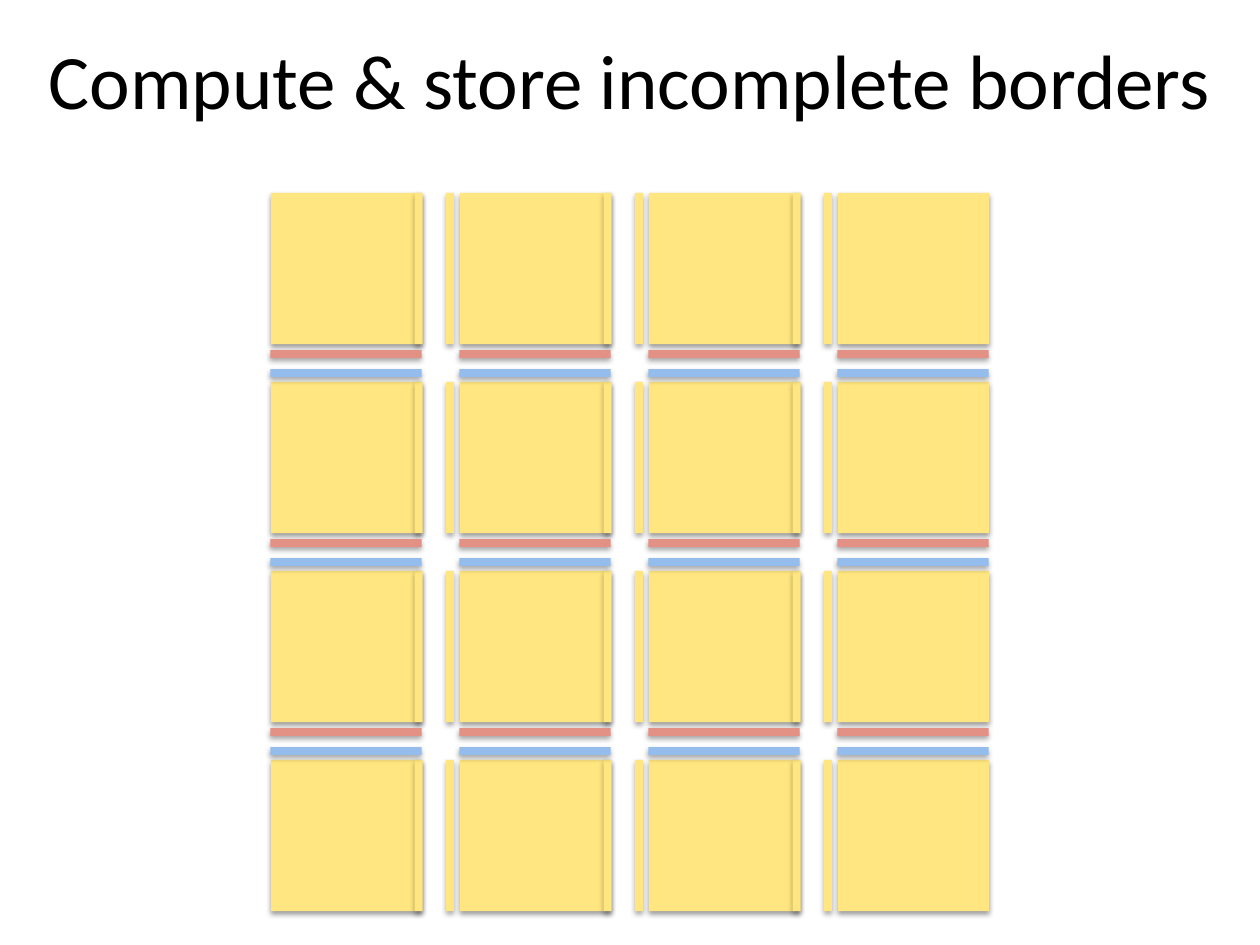
from lxml.etree import SubElement
from pptx import Presentation
from pptx.dml.color import RGBColor
from pptx.enum.shapes import MSO_SHAPE
from pptx.enum.text import MSO_ANCHOR, PP_ALIGN
from pptx.oxml.ns import qn
from pptx.util import Cm, Pt

BLACK = RGBColor(0x00, 0x00, 0x00)
YELLOW = RGBColor(0xFF, 0xE6, 0x80)
RED = RGBColor(0xE3, 0x90, 0x85)
BLUE = RGBColor(0x94, 0xBC, 0xEC)

# Grid measures in centimetres
N = 4
PITCH = 3.81
CELL = 3.05
BAR = 0.16
LEFT, TOP = 5.46, 3.89


def add_shadow(sp, distance, alpha):
    """Give the shape a soft black shadow straight below it."""
    sp.shadow.inherit = False
    effects = sp.element.spPr.find(qn("a:effectLst"))
    shadow = SubElement(effects, qn("a:outerShdw"), blurRad=str(Pt(3.1)),
                        dist=str(Pt(distance)), dir="5400000", rotWithShape="0")
    color = SubElement(shadow, qn("a:srgbClr"), val=str(BLACK))
    SubElement(color, qn("a:alpha"), val=str(alpha * 1000))


def add_text(tf, text, size=44, font="Calibri", color=BLACK, align=PP_ALIGN.CENTER):
    p = tf.paragraphs[0]
    p.alignment = align
    r = p.add_run()
    r.text = text
    r.font.size = Pt(size)
    r.font.name = font
    r.font.color.rgb = color


class Deck:
    def __init__(self, width, height):
        self.prs = Presentation()
        self.prs.slide_width, self.prs.slide_height = Cm(width), Cm(height)
        self.s = self.prs.slides.add_slide(self.prs.slide_layouts[6])

    def title(self, text, x, y, w, h):
        tf = self.s.shapes.add_textbox(Cm(x), Cm(y), Cm(w), Cm(h)).text_frame
        tf.word_wrap = True
        tf.vertical_anchor = MSO_ANCHOR.MIDDLE
        add_text(tf, text)

    def grid(self, x, y, w, h, color, cols=N, rows=N, distance=1.8, alpha=35):
        """Draw one group of equal rectangles, spaced by the grid pitch."""
        group = self.s.shapes.add_group_shape()
        for col in range(cols):
            for row in range(rows):
                sp = group.shapes.add_shape(
                    MSO_SHAPE.RECTANGLE, Cm(x + col * PITCH), Cm(y + row * PITCH),
                    Cm(w), Cm(h))
                sp.fill.solid()
                sp.fill.fore_color.rgb = color
                sp.line.fill.background()
                add_shadow(sp, distance, alpha)


deck = Deck(25.4, 19.05)
deck.title("Compute & store incomplete borders", 0, 0, 25.4, 3.18)

# Blocks
deck.grid(LEFT, TOP, CELL, CELL, YELLOW, distance=1.6, alpha=38)

# Vertical borders: right edge of a block, then left of the next one
for x in (8.36, 8.99):
    deck.grid(x, TOP, BAR, CELL, YELLOW, cols=N - 1)

# Horizontal borders between the rows
for y, color in ((7.06, RED), (7.44, BLUE)):
    deck.grid(LEFT - 0.01, y, CELL, BAR, color, rows=N - 1)

deck.prs.save("out.pptx")
